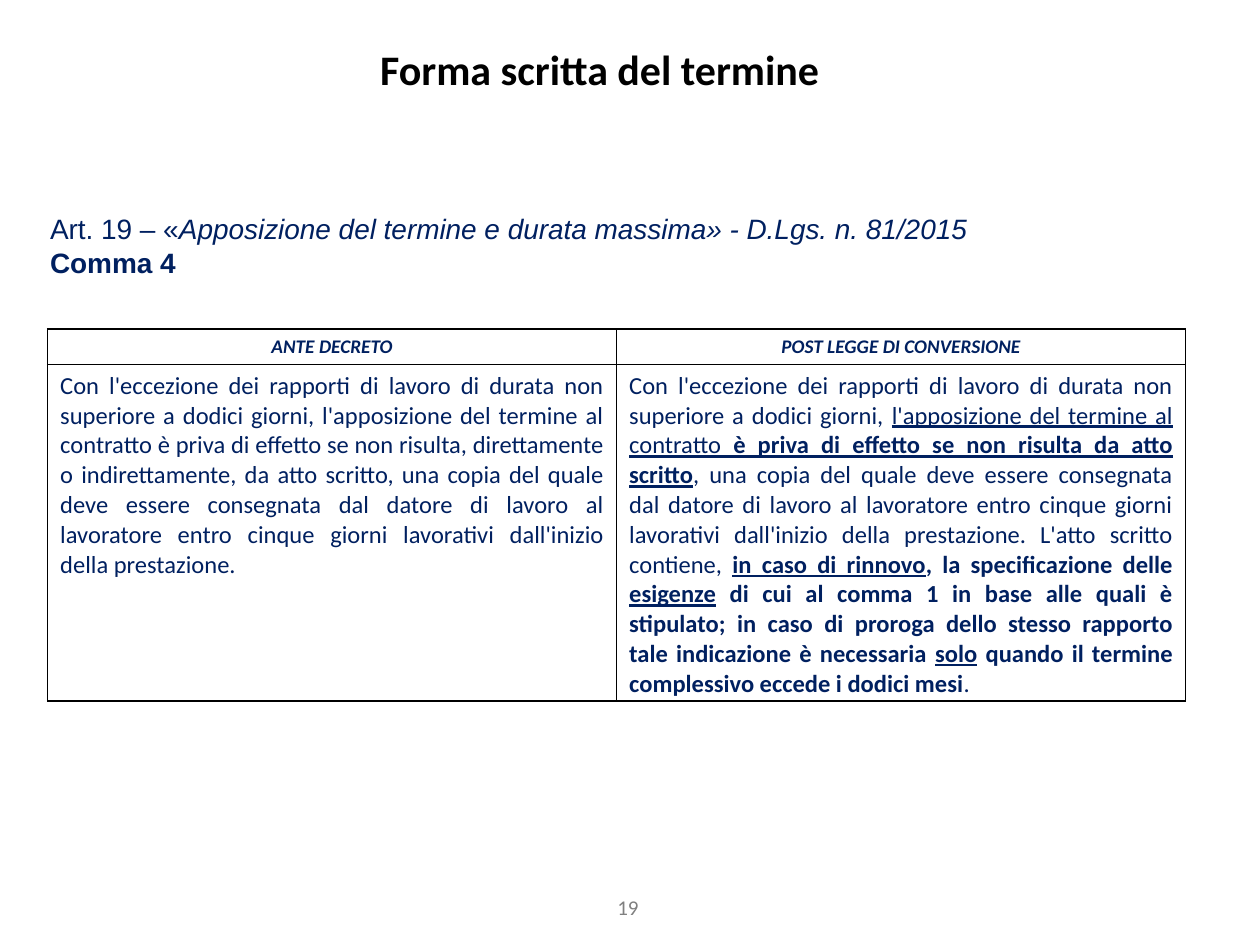
from lxml.etree import SubElement
from pptx import Presentation
from pptx.dml.color import RGBColor
from pptx.enum.text import MSO_ANCHOR, PP_ALIGN
from pptx.oxml.ns import qn
from pptx.util import Cm, Pt

NAVY, BLACK, GREY = "002060", "000000", "808080"

HEADS = ["ANTE DECRETO", "POST LEGGE DI CONVERSIONE"]
# Each run is (text, style); style letters: b bold, i italic, u underline
BEFORE = [
    ("Con l'eccezione dei rapporti di lavoro di durata non superiore a dodici "
     "giorni, l'apposizione del termine al contratto è priva di effetto se non "
     "risulta, direttamente o indirettamente, da atto scritto, una copia del "
     "quale deve essere consegnata dal datore di lavoro al lavoratore entro "
     "cinque giorni lavorativi dall'inizio della prestazione.", ""),
]
AFTER = [
    ("Con l'eccezione dei rapporti di lavoro di durata non superiore a dodici "
     "giorni, ", ""),
    ("l'apposizione del termine al contratto ", "u"),
    ("è priva di effetto se non risulta da atto scritto", "bu"),
    (", una copia del quale deve essere consegnata dal datore di lavoro al "
     "lavoratore entro cinque giorni lavorativi dall'inizio della prestazione. "
     "L'atto scritto contiene, ", ""),
    ("in caso di rinnovo", "bu"),
    (", la specificazione delle ", "b"),
    ("esigenze", "bu"),
    (" di cui al comma 1 in base alle quali è stipulato; in caso di proroga "
     "dello stesso rapporto tale indicazione è necessaria ", "b"),
    ("solo", "bu"),
    (" quando il termine complessivo eccede i dodici mesi", "b"),
    (".", ""),
]
ARTICLE = [
    [("Art. 19 – «", ""),
     ("Apposizione del termine e durata massima» - D.Lgs. n. 81/2015", "i")],
    [("Comma 4", "b")],
]


def paint(font, color):
    font.color.rgb = RGBColor.from_string(color)


def write(para, runs, size, color=NAVY, face="Calibri", align=PP_ALIGN.LEFT):
    para.alignment = align
    for text, style in runs:
        run = para.add_run()
        run.text = text
        font = run.font
        font.name, font.size = face, Pt(size)
        font.bold, font.italic = "b" in style, "i" in style
        font.underline = "u" in style
        paint(font, color)


def place(shape, left, top, width, height):
    shape.left, shape.top = Cm(left), Cm(top)
    shape.width, shape.height = Cm(width), Cm(height)


def add_title(slide, text):
    title = slide.shapes.title
    place(title, 4.09, 0.74, 16, 1.27)
    title.text_frame.vertical_anchor = MSO_ANCHOR.MIDDLE
    write(title.text_frame.paragraphs[0], [(text, "b")], 24, BLACK,
          align=PP_ALIGN.CENTER)


def add_box(slide, left, top, width, height):
    box = slide.shapes.add_textbox(Cm(left), Cm(top), Cm(width), Cm(height))
    box.text_frame.word_wrap = True
    return box.text_frame


def add_article(slide):
    frame = add_box(slide, 0.76, 4.14, 21.56, 2.49)
    for n, runs in enumerate(ARTICLE):
        para = frame.add_paragraph() if n else frame.paragraphs[0]
        write(para, runs, 16, face="Arial")


def frame_cell(cell):
    """Clear the fill and draw a thin black line on all four sides."""
    cell.fill.background()
    props = cell._tc.get_or_add_tcPr()
    for n, side in enumerate(("lnL", "lnR", "lnT", "lnB")):
        line = SubElement(props, qn(f"a:{side}"), w=str(Pt(1)))
        fill = SubElement(line, qn("a:solidFill"))
        SubElement(fill, qn("a:srgbClr"), val=BLACK)
        props.insert(n, line)


def add_grid(slide):
    grid = slide.shapes.add_table(2, 2, Cm(0.96), Cm(6.63), Cm(22.94),
                                  Cm(7.49)).table
    grid.first_row = grid.horz_banding = False
    grid.rows[0].height, grid.rows[1].height = Cm(0.71), Cm(6.78)
    for col, (head, body) in enumerate(zip(HEADS, (BEFORE, AFTER))):
        top, low = grid.cell(0, col), grid.cell(1, col)
        write(top.text_frame.paragraphs[0], [(head, "bi")], 11,
              align=PP_ALIGN.CENTER)
        write(low.text_frame.paragraphs[0], body, 14, align=PP_ALIGN.JUSTIFY)
        for cell in (top, low):
            frame_cell(cell)


def main():
    deck = Presentation()
    deck.slide_width, deck.slide_height = Cm(25.4), Cm(19.05)
    slide = deck.slides.add_slide(deck.slide_layouts[5])
    add_title(slide, "Forma scritta del termine")
    add_article(slide)
    add_grid(slide)
    number = add_box(slide, 9.7, 17.91, 5.92, 1.02)
    write(number.paragraphs[0], [("19", "")], 12, GREY, align=PP_ALIGN.CENTER)
    deck.save("out.pptx")


if __name__ == "__main__":
    main()
